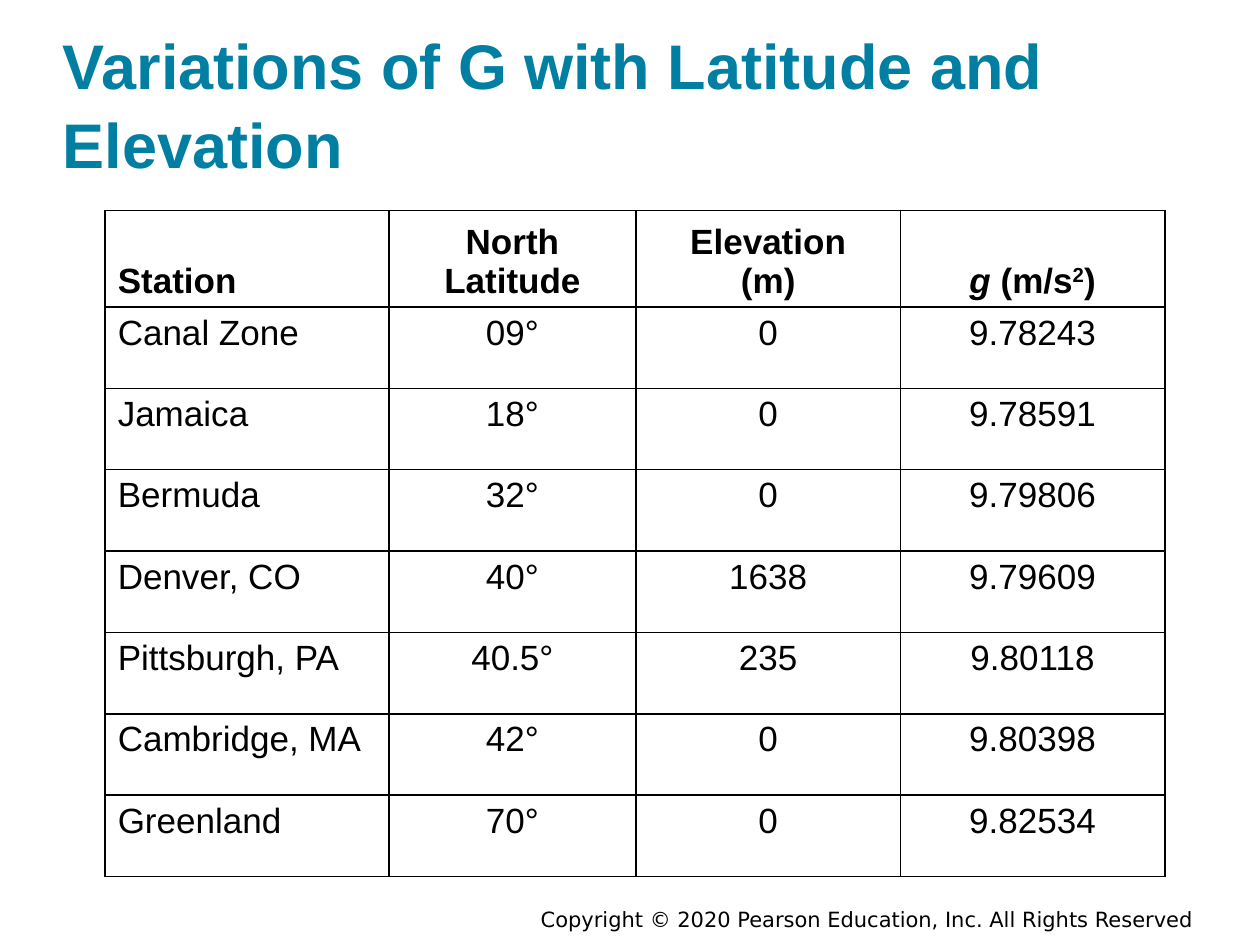
from lxml.etree import SubElement
from pptx import Presentation
from pptx.dml.color import RGBColor
from pptx.enum.text import MSO_ANCHOR, PP_ALIGN
from pptx.oxml.ns import qn
from pptx.util import Cm, Pt

COLORS = {"title": "007FA3", "text": "000000", "rule": "000000"}

# A header cell is a list of lines; a line is a list of (text, style) runs
HEADS = [
    [[("Station", "")]],
    [[("North", "")], [("Latitude", "")]],
    [[("Elevation", "")], [("(m)", "")]],
    [[("g ", "italic"), ("(m/s", ""), ("2", "super"), (")", "")]],
]
ROWS = [
    ("Canal Zone", "09°", "0", "9.78243"),
    ("Jamaica", "18°", "0", "9.78591"),
    ("Bermuda", "32°", "0", "9.79806"),
    ("Denver, CO", "40°", "1638", "9.79609"),
    ("Pittsburgh, PA", "40.5°", "235", "9.80118"),
    ("Cambridge, MA", "42°", "0", "9.80398"),
    ("Greenland", "70°", "0", "9.82534"),
]
WIDTHS = [5.72, 4.98, 5.33, 5.33]
HEAD_TALL, ROW_TALL = 1.82, 1.64


def add_run(para, text, size, color="text", bold=False, style="", face="Arial"):
    run = para.add_run()
    run.text = text
    font = run.font
    font.name, font.size, font.bold = face, Pt(size), bold
    font.italic = style == "italic"
    font.color.rgb = RGBColor.from_string(COLORS[color])
    if style == "super":
        run._r.get_or_add_rPr().set("baseline", "30000")


def add_box(slide, box, anchor, inset):
    frame = slide.shapes.add_textbox(*map(Cm, box)).text_frame
    frame.word_wrap = True
    frame.vertical_anchor = anchor
    frame.margin_left = frame.margin_right = Cm(inset)
    frame.margin_top = frame.margin_bottom = Cm(inset)
    return frame.paragraphs[0]


def add_title(slide, box):
    para = add_box(slide, box, MSO_ANCHOR.BOTTOM, 0)
    para.line_spacing = 1.05
    add_run(para, "Variations of G with Latitude and Elevation", 36, "title", True)


def add_footer(slide, box):
    para = add_box(slide, box, MSO_ANCHOR.MIDDLE, 0.25)
    para.alignment = PP_ALIGN.RIGHT
    add_run(para, "Copyright © 2020 Pearson Education, Inc. All Rights Reserved",
            12, face="DejaVu Sans")


def add_rules(cell):
    props = cell._tc.get_or_add_tcPr()
    for side in ("lnL", "lnR", "lnT", "lnB"):
        line = SubElement(props, qn(f"a:{side}"), w=str(Pt(1)))
        fill = SubElement(line, qn("a:solidFill"))
        SubElement(fill, qn("a:srgbClr"), val=COLORS["rule"])


def fill_cell(cell, lines, align, head):
    add_rules(cell)
    cell.fill.background()
    cell.vertical_anchor = MSO_ANCHOR.BOTTOM if head else MSO_ANCHOR.TOP
    frame = cell.text_frame
    for i, line in enumerate(lines):
        para = frame.add_paragraph() if i else frame.paragraphs[0]
        para.alignment = align
        for text, style in line:
            add_run(para, text, 20, bold=head, style=style)


def add_grid(slide, left, top):
    data = [HEADS] + [[[[(text, "")]] for text in row] for row in ROWS]
    talls = [HEAD_TALL] + [ROW_TALL] * len(ROWS)
    table = slide.shapes.add_table(
        len(data), len(WIDTHS), Cm(left), Cm(top), Cm(sum(WIDTHS)), Cm(sum(talls))
    ).table
    table.horz_banding = False
    for col, width in zip(table.columns, WIDTHS):
        col.width = Cm(width)
    for r, (row, tall) in enumerate(zip(data, talls)):
        table.rows[r].height = Cm(tall)
        for c, lines in enumerate(row):
            align = PP_ALIGN.CENTER if c else PP_ALIGN.LEFT
            fill_cell(table.cell(r, c), lines, align, r == 0)


def main():
    deck = Presentation()
    deck.slide_width, deck.slide_height = Cm(25.4), Cm(19.05)
    slide = deck.slides.add_slide(deck.slide_layouts[6])
    add_footer(slide, (10.44, 18.01, 13.87, 1.02))
    add_title(slide, (1.27, 0.61, 22.86, 3.05))
    add_grid(slide, 2.12, 4.24)
    deck.save("out.pptx")


if __name__ == "__main__":
    main()
